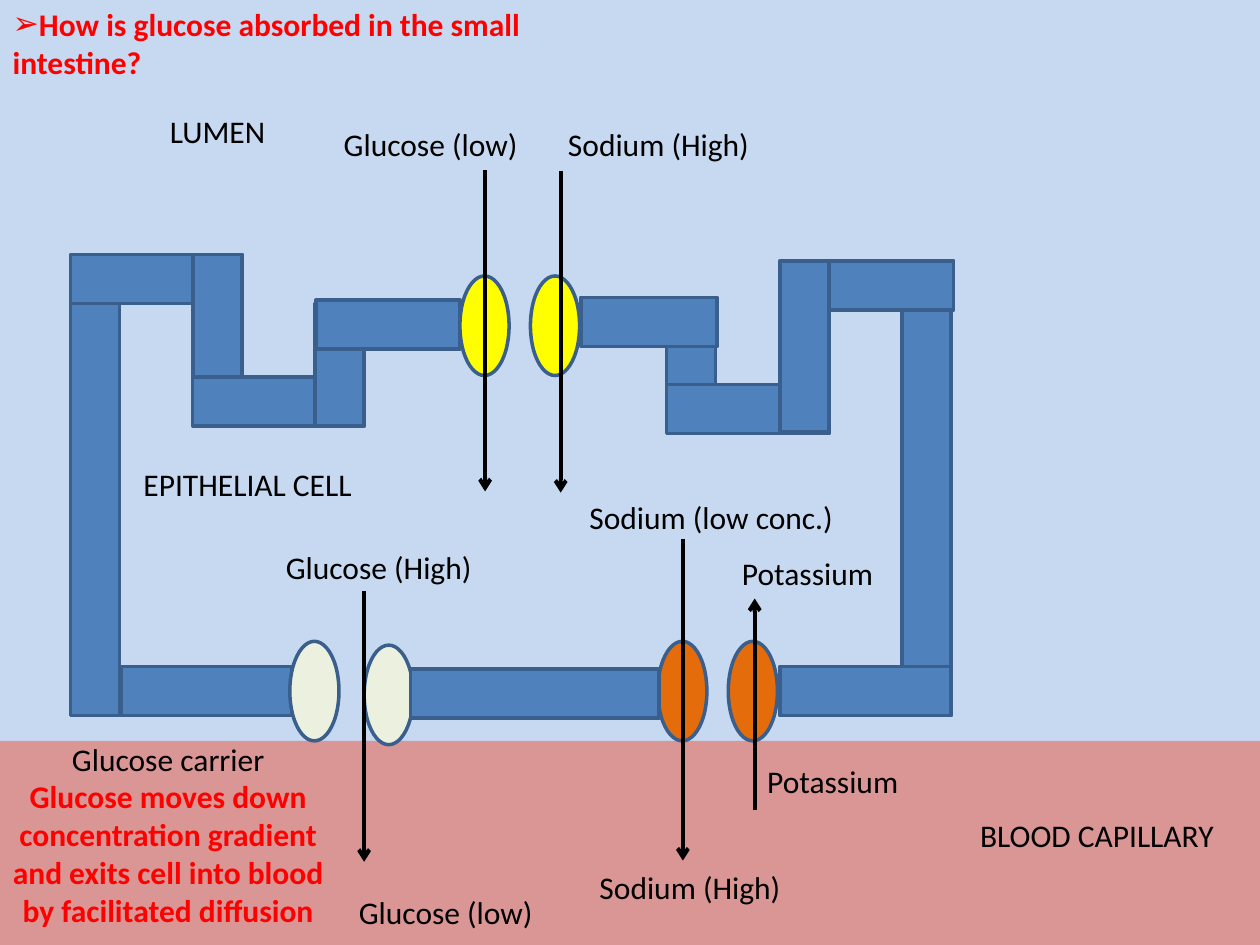
from lxml import etree
from pptx import Presentation
from pptx.dml.color import RGBColor
from pptx.enum.shapes import MSO_CONNECTOR, MSO_SHAPE
from pptx.enum.text import MSO_ANCHOR, MSO_AUTO_SIZE, PP_ALIGN
from pptx.oxml.ns import qn
from pptx.util import Inches, Pt

RECT, OVAL = MSO_SHAPE.RECTANGLE, MSO_SHAPE.OVAL
STRAIGHT = MSO_CONNECTOR.STRAIGHT
LEFT, CENTER = PP_ALIGN.LEFT, PP_ALIGN.CENTER
TOP = MSO_ANCHOR.TOP
NO_FIT = MSO_AUTO_SIZE.NONE
rgb = RGBColor.from_string

LUMEN, BLOOD = "C6D9F1", "D99694"
WALL, OUTLINE = "4F81BD", "3A5F8C"
RED, BLACK = "FF0000", "000000"
YELLOW, ORANGE, CREAM = "FFFF00", "E46C0A", "EBF1DE"
THICK = 0.39      # width of the cell wall and of each carrier
CARRIER_H = 0.79


def write(paragraph, text, color=BLACK, bold=False, align=LEFT):
    paragraph.alignment = align
    run = paragraph.add_run()
    run.text = text
    run.font.name = "Calibri"
    run.font.size = Pt(18)
    run.font.bold = bold
    run.font.color.rgb = rgb(color)


def add_filled(kind, left, top, width, height, fill, outline=OUTLINE):
    shape = slide.shapes.add_shape(
        kind, Inches(left), Inches(top), Inches(width), Inches(height))
    shape.shadow.inherit = False
    shape.fill.solid()
    shape.fill.fore_color.rgb = rgb(fill)
    if outline:
        shape.line.color.rgb = rgb(outline)
        shape.line.width = Pt(2)
    else:
        shape.line.fill.background()


prs = Presentation()
prs.slide_width, prs.slide_height = Inches(10), Inches(7.5)
slide = prs.slides.add_slide(prs.slide_layouts[5])
slide.background.fill.solid()
slide.background.fill.fore_color.rgb = rgb(LUMEN)

# Title with an arrowhead bullet
title = slide.shapes.title
title.left, title.top = Inches(0), Inches(-0.01)
title.width, title.height = Inches(5), Inches(0.71)
title.text_frame.word_wrap = True
title.text_frame.auto_size = NO_FIT
title.text_frame.vertical_anchor = TOP
question = title.text_frame.paragraphs[0]
write(question, "How is glucose absorbed in the small intestine?", color=RED, bold=True)
question_format = question._p.get_or_add_pPr()
question_format.set("marL", "0")
question_format.set("indent", "0")
etree.SubElement(question_format, qn("a:buFont")).set("typeface", "Arial")
etree.SubElement(question_format, qn("a:buChar")).set("char", "➢")

# Blood capillary
add_filled(RECT, 0, 5.88, 10, 1.62, BLOOD, outline=None)

# Cell wall: left, top, width, height
upper_walls = [
    (0.56, 2.02, THICK, 3.66),
    (0.56, 2.02, 1.36, THICK),
    (1.53, 2.02, THICK, 1.36),
    (1.53, 2.99, 1.36, THICK),
    (2.5, 2.41, THICK, 0.97),
    (5.29, 2.38, THICK, 0.97),
    (2.51, 2.38, 1.14, THICK),
    (4.61, 2.36, 1.08, THICK),
    (5.29, 3.05, 1.29, THICK),
    (7.16, 2.07, THICK, 3.6),
    (6.21, 2.07, 1.36, THICK),
    (6.19, 2.07, THICK, 1.36),
]
lower_walls = [(0.96, 5.29, 1.36, THICK), (6.19, 5.29, 1.36, THICK)]
for wall in upper_walls + lower_walls:
    add_filled(RECT, *wall, WALL)

# Carrier proteins
for left, top, color in [
    (2.3, 5.09, CREAM), (2.89, 5.12, CREAM),
    (5.22, 5.09, ORANGE), (5.78, 5.09, ORANGE),
    (3.65, 2.19, YELLOW), (4.21, 2.19, YELLOW),
]:
    add_filled(OVAL, left, top, THICK, CARRIER_H, color)

# The middle base wall covers the edge of the glucose carrier
add_filled(RECT, 3.26, 5.31, 1.97, THICK, WALL)

# Transport arrows: x, start y, end y
for x, start, end in [
    (5.42, 4.28, 6.83), (5.99, 6.43, 4.75), (3.85, 1.35, 3.9),
    (4.45, 1.36, 3.91), (2.89, 4.69, 6.84),
]:
    arrow = slide.shapes.add_connector(
        STRAIGHT, Inches(x), Inches(start), Inches(x), Inches(end))
    arrow.line.color.rgb = rgb(BLACK)
    arrow.line.width = Pt(2.25)
    etree.SubElement(arrow.line._get_or_add_ln(), qn("a:tailEnd")).set("type", "arrow")
    etree.SubElement(arrow._element.spPr, qn("a:effectLst"))

# Labels: text, left, top, width
for text, left, top, width in [
    ("LUMEN", 1.25, 0.84, 0.97),
    ("EPITHELIAL CELL", 1.04, 3.64, 1.87),
    ("BLOOD CAPILLARY", 7.68, 6.43, 2.08),
    ("Glucose (low)", 2.63, 0.94, 1.6),
    ("Sodium (High)", 4.41, 0.94, 1.66),
    ("Sodium (low conc.)", 4.58, 3.9, 2.16),
    ("Glucose (High)", 2.17, 4.3, 1.7),
    ("Potassium", 5.79, 4.35, 1.25),
    ("Potassium", 5.99, 6, 1.25),
    ("Sodium (High)", 4.66, 6.84, 1.66),
    ("Glucose (low)", 2.75, 7.04, 1.6),
]:
    label = slide.shapes.add_textbox(Inches(left), Inches(top), Inches(width), Inches(0.4))
    label.text_frame.word_wrap = False
    write(label.text_frame.paragraphs[0], text)

# Explanation of the glucose carrier
explanation = slide.shapes.add_textbox(
    Inches(-0.02), Inches(5.82), Inches(2.71), Inches(1.62)).text_frame
explanation.word_wrap = True
write(explanation.paragraphs[0], "Glucose carrier", align=CENTER)
write(explanation.add_paragraph(),
      "Glucose moves down concentration gradient and exits cell into blood "
      "by facilitated diffusion", color=RED, bold=True, align=CENTER)

prs.save("out.pptx")
